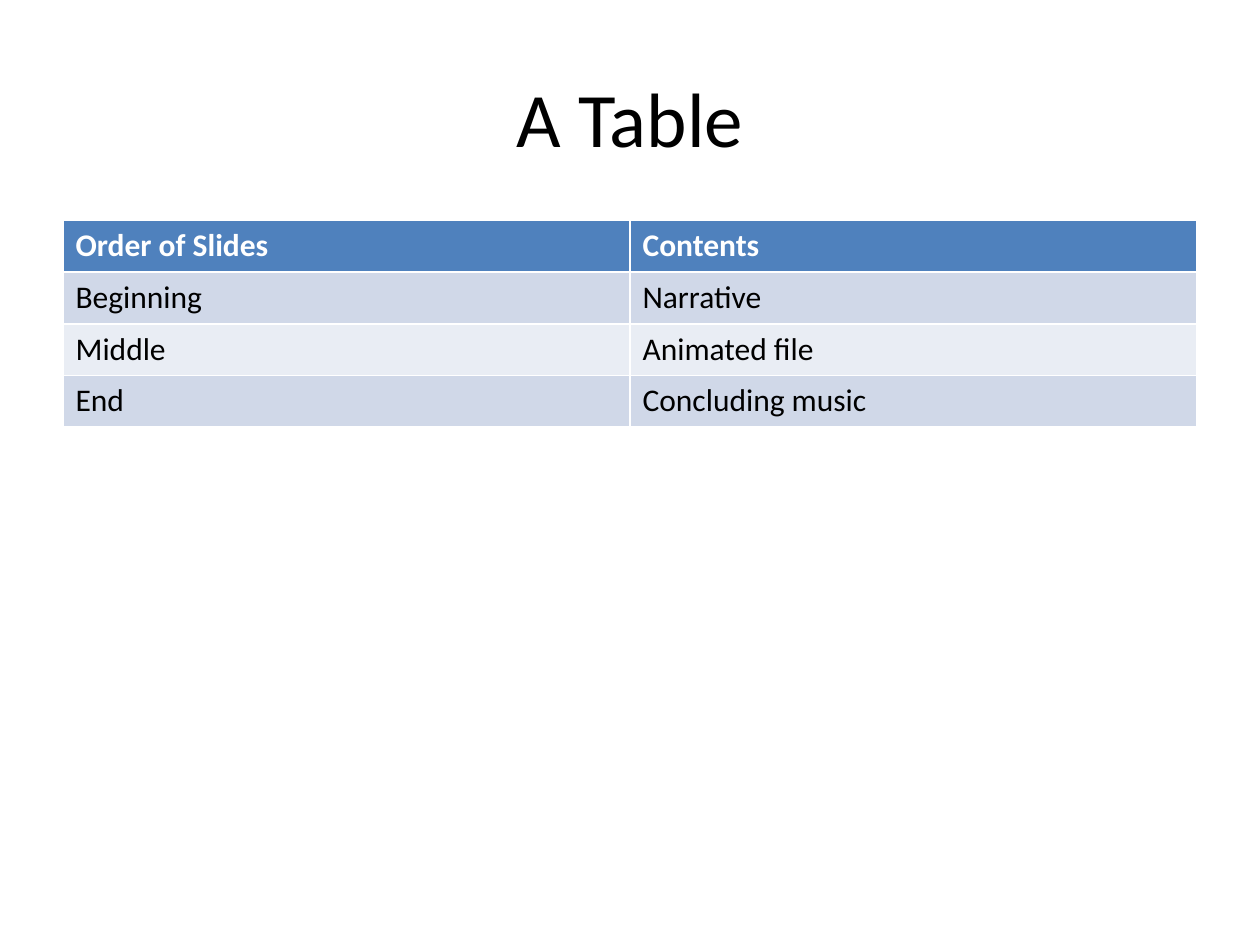
from pptx import Presentation
from pptx.dml.color import RGBColor
from pptx.enum.text import MSO_ANCHOR, PP_ALIGN
from pptx.util import Inches, Pt

LEFT, CENTER = PP_ALIGN.LEFT, PP_ALIGN.CENTER
MIDDLE = MSO_ANCHOR.MIDDLE

TITLE = "A Table"
ROWS = [
    ("Order of Slides", "Contents"),
    ("Beginning", "Narrative"),
    ("Middle", "Animated file"),
    ("End", "Concluding music"),
]

THEME = {
    "font": "Calibri",
    "title_size": 44,
    "table_size": 18,
    "text": "000000",
    "header_text": "FFFFFF",
    "header_fill": "4F81BD",
    "bands": ("D0D8E8", "E9EDF4"),
}

SLIDE_WIDTH, SLIDE_HEIGHT = 10, 7.5
MARGIN = 0.5
CONTENT_WIDTH = SLIDE_WIDTH - 2 * MARGIN
TITLE_TOP, TITLE_HEIGHT = 0.3, 1.25
TABLE_TOP, ROW_HEIGHT = 1.75, 0.41


def write(frame, text, *, size, color=THEME["text"], bold=False, align=LEFT):
    paragraph = frame.paragraphs[0]
    paragraph.alignment = align
    run = paragraph.add_run()
    run.text = text
    run.font.name = THEME["font"]
    run.font.size = Pt(size)
    run.font.bold = bold
    run.font.color.rgb = RGBColor.from_string(color)


def add_title(slide):
    title = slide.shapes.title
    title.left, title.top = Inches(MARGIN), Inches(TITLE_TOP)
    title.width, title.height = Inches(CONTENT_WIDTH), Inches(TITLE_HEIGHT)
    title.text_frame.vertical_anchor = MIDDLE
    write(title.text_frame, TITLE, size=THEME["title_size"], align=CENTER)


def add_contents_table(slide):
    contents = slide.shapes.add_table(
        len(ROWS), len(ROWS[0]), Inches(MARGIN), Inches(TABLE_TOP),
        Inches(CONTENT_WIDTH), Inches(ROW_HEIGHT * len(ROWS)),
    ).table
    for row_index, row in enumerate(ROWS):
        header = row_index == 0
        band = THEME["bands"][(row_index - 1) % 2]
        for column_index, text in enumerate(row):
            cell = contents.cell(row_index, column_index)
            cell.fill.solid()
            cell.fill.fore_color.rgb = RGBColor.from_string(
                THEME["header_fill"] if header else band)
            write(cell.text_frame, text, size=THEME["table_size"], bold=header,
                  color=THEME["header_text" if header else "text"])


def main():
    deck = Presentation()
    deck.slide_width, deck.slide_height = Inches(SLIDE_WIDTH), Inches(SLIDE_HEIGHT)
    title_only = deck.slide_layouts.get_by_name("Title Only")
    slide = deck.slides.add_slide(title_only)
    add_title(slide)
    add_contents_table(slide)
    deck.save("out.pptx")


if __name__ == "__main__":
    main()
